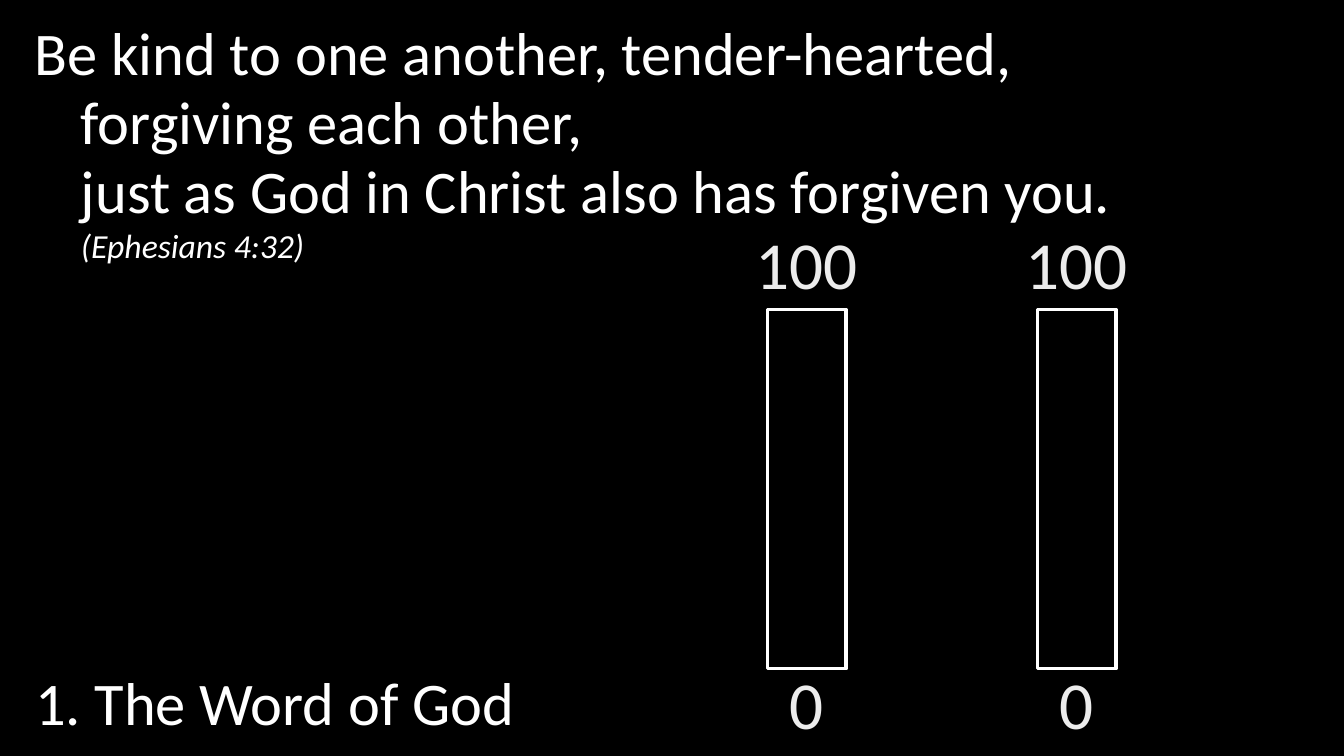
from dataclasses import dataclass

from pptx import Presentation
from pptx.dml.color import RGBColor
from pptx.enum.shapes import MSO_SHAPE
from pptx.enum.text import MSO_ANCHOR, MSO_AUTO_SIZE, PP_ALIGN
from pptx.util import Inches, Pt


@dataclass(frozen=True)
class Theme:
    font: str = "Calibri"
    black: RGBColor = RGBColor(0, 0, 0)
    white: RGBColor = RGBColor(255, 255, 255)
    pale: RGBColor = RGBColor(0xEC, 0xEC, 0xEC)
    body: int = 36
    cite: int = 20
    mark: int = 40


THEME = Theme()
VERSE = (
    "Be kind to one another, tender-hearted,",
    "forgiving each other,",
    "just as God in Christ also has forgiven you.",
    "(Ephesians 4:32)",
)


def style(run, size, color):
    run.font.name = THEME.font
    run.font.size = Pt(size)
    run.font.color.rgb = color


def place(shape, left, top, width, height):
    shape.left, shape.top = Inches(left), Inches(top)
    shape.width, shape.height = Inches(width), Inches(height)


def write(shape, text, anchor):
    """Fill a text frame with one left-aligned, hanging paragraph."""
    frame = shape.text_frame
    frame.text = ""
    frame.word_wrap = True
    frame.auto_size = MSO_AUTO_SIZE.NONE
    frame.vertical_anchor = anchor
    para = frame.paragraphs[0]
    para.text = text
    para.alignment = PP_ALIGN.LEFT
    para.line_spacing = 0.95
    props = para._p.get_or_add_pPr()
    props.set("marL", str(Inches(0.38)))
    props.set("indent", str(-Inches(0.38)))
    for run in para.runs:
        style(run, THEME.body, THEME.white)
    return para


def add_verse(slide, left, top, width, height):
    box = slide.shapes.add_textbox(*map(Inches, (left, top, width, height)))
    cite = write(box, "\v".join(VERSE), MSO_ANCHOR.TOP).runs[-1]
    cite.font.size = Pt(THEME.cite)
    cite.font.italic = True


def add_title(slide, left, top, width, height):
    title = slide.shapes.title
    place(title, left, top, width, height)
    write(title, "1. The Word of God", MSO_ANCHOR.BOTTOM)


def add_mark(group, text, left, top, width, height):
    box = group.shapes.add_textbox(*map(Inches, (left, top, width, height)))
    box.text_frame.word_wrap = False
    para = box.text_frame.paragraphs[0]
    para.text = text
    para.alignment = PP_ALIGN.CENTER
    style(para.runs[0], THEME.mark, THEME.pale)


def add_gauge(slide, left, top, width, height):
    """Draw an upright bar with 100 above it and 0 below it."""
    group = slide.shapes.add_group_shape()
    mark, bar = 0.77, 0.65
    bar_left = left + (width - bar) / 2
    bar_tall = height - 2 * mark + 0.1
    rect = group.shapes.add_shape(
        MSO_SHAPE.RECTANGLE,
        *map(Inches, (bar_left, top + mark, bar, bar_tall)))
    rect.shadow.inherit = False
    rect.fill.solid()
    rect.fill.fore_color.rgb = THEME.black
    rect.line.color.rgb = THEME.white
    rect.line.width = Pt(2)
    add_mark(group, "100", left, top, width, mark)
    add_mark(group, "0", left, top + height - mark, width, mark)


def main():
    deck = Presentation()
    deck.slide_width, deck.slide_height = Inches(11.11), Inches(6.25)
    slide = deck.slides.add_slide(deck.slide_layouts[5])
    slide.background.fill.solid()
    slide.background.fill.fore_color.rgb = THEME.black
    add_verse(slide, 0.19, 0.12, 10.74, 5.29)
    add_title(slide, 0.19, 5.56, 8.12, 0.6)
    for step in range(2):
        add_gauge(slide, 6.11 + step * 2.23, 1.79, 1.12, 4.41)
    deck.save("out.pptx")


if __name__ == "__main__":
    main()
